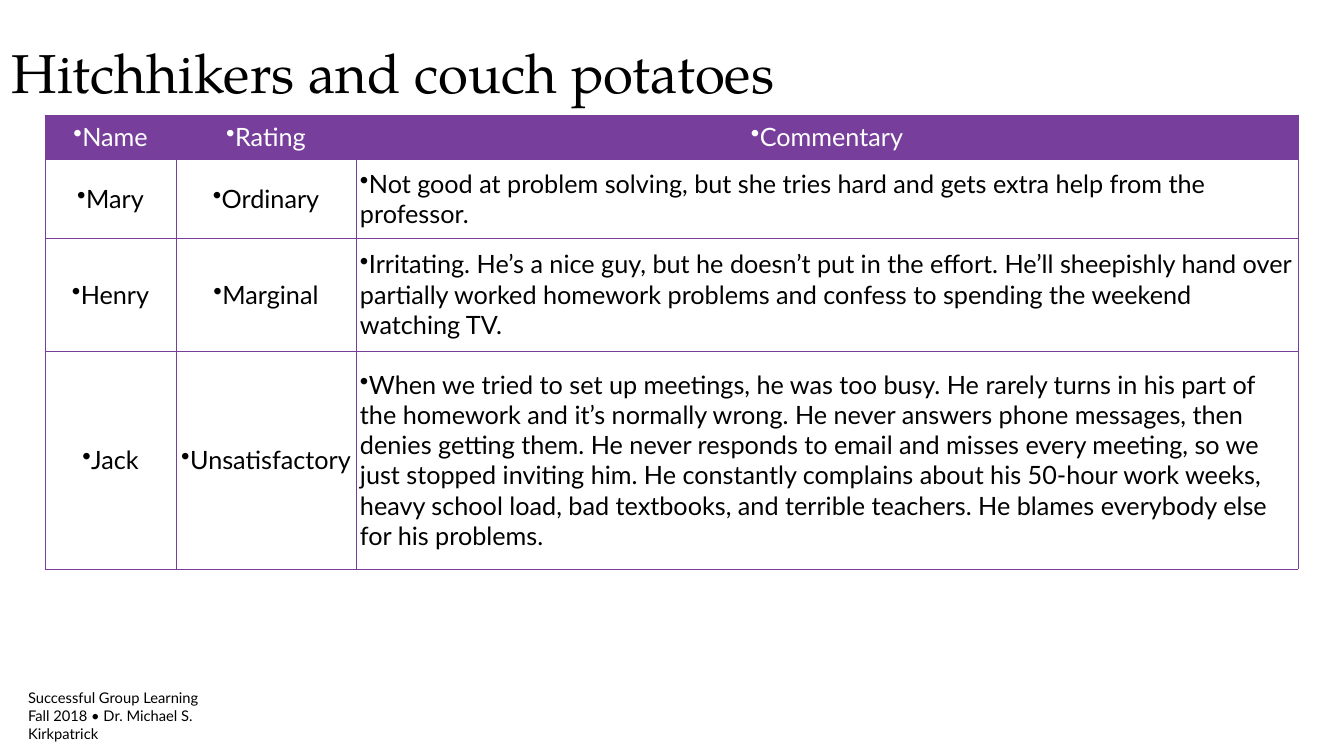
from lxml.etree import SubElement
from pptx import Presentation
from pptx.dml.color import RGBColor
from pptx.enum.text import MSO_ANCHOR as Anchor, PP_ALIGN as Align
from pptx.oxml.ns import qn
from pptx.util import Pt

EMU_PER_PX = 12095
COLORS = {"purple": "773F9B", "white": "FFFFFF", "black": "000000"}
BODY_FONT = "Lato"
TITLE_FONT = "TeX Gyre Pagella"

COLUMN_WIDTHS = [131, 180, 942]
ROW_HEIGHTS = [44, 79, 113, 218]
RATINGS = [
    ("Name", "Rating", "Commentary"),
    ("Mary", "Ordinary",
     "Not good at problem solving, but she tries hard and gets extra help "
     "from the professor."),
    ("Henry", "Marginal",
     "Irritating. He’s a nice guy, but he doesn’t put in the effort. He’ll "
     "sheepishly hand over partially worked homework problems and confess to "
     "spending the weekend watching TV."),
    ("Jack", "Unsatisfactory",
     "When we tried to set up meetings, he was too busy. He rarely turns in "
     "his part of the homework and it’s normally wrong. He never answers phone "
     "messages, then denies getting them. He never responds to email and "
     "misses every meeting, so we just stopped inviting him. He constantly "
     "complains about his 50-hour work weeks, heavy school load, bad "
     "textbooks, and terrible teachers. He blames everybody else for his "
     "problems."),
]


def px(length):
    return length * EMU_PER_PX


def add_run(paragraph, text, size, font, color):
    run = paragraph.add_run()
    run.text = text
    run.font.size = Pt(size)
    run.font.name = font
    run.font.bold = False
    run.font.color.rgb = RGBColor.from_string(COLORS[color])


def set_margins(holder, margin):
    holder.margin_left = holder.margin_right = px(margin)
    holder.margin_top = holder.margin_bottom = px(margin)


def add_lines(slide, box, lines, size, font, wrap):
    frame = slide.shapes.add_textbox(*map(px, box)).text_frame
    frame.word_wrap = wrap
    frame.vertical_anchor = Anchor.MIDDLE
    set_margins(frame, 3)
    for index, line in enumerate(lines):
        paragraph = frame.add_paragraph() if index else frame.paragraphs[0]
        paragraph.alignment = Align.LEFT
        add_run(paragraph, line, size, font, "black")


def add_borders(cell, color):
    properties = cell._tc.get_or_add_tcPr()
    for side in ("lnL", "lnR", "lnT", "lnB"):
        border = SubElement(properties, qn(f"a:{side}"), w=str(Pt(1)))
        fill = SubElement(border, qn("a:solidFill"))
        SubElement(fill, qn("a:srgbClr"), val=COLORS[color])


def add_bullet(paragraph):
    properties = paragraph._p.get_or_add_pPr()
    properties.set("marL", "0")
    properties.set("indent", "0")
    SubElement(properties, qn("a:buChar"), char="•")


def fill_cell(cell, text, is_header, centered):
    set_margins(cell, 4)
    cell.vertical_anchor = Anchor.MIDDLE
    add_borders(cell, "purple")
    cell.fill.solid()
    cell.fill.fore_color.rgb = RGBColor.from_string(
        COLORS["purple" if is_header else "white"])
    paragraph = cell.text_frame.paragraphs[0]
    paragraph.alignment = Align.CENTER if centered else Align.LEFT
    add_bullet(paragraph)
    add_run(paragraph, text, 24, BODY_FONT, "white" if is_header else "black")


def add_ratings(slide, left, top):
    box = (left, top, sum(COLUMN_WIDTHS), sum(ROW_HEIGHTS))
    ratings = slide.shapes.add_table(
        len(ROW_HEIGHTS), len(COLUMN_WIDTHS), *map(px, box)).table
    ratings.horz_banding = False
    for column, width in zip(ratings.columns, COLUMN_WIDTHS):
        column.width = px(width)
    for row, height in zip(ratings.rows, ROW_HEIGHTS):
        row.height = px(height)
    for r, entry in enumerate(RATINGS):
        for c, text in enumerate(entry):
            is_header = r == 0
            fill_cell(ratings.cell(r, c), text, is_header, is_header or c < 2)


def main():
    deck = Presentation()
    deck.slide_width, deck.slide_height = px(1344), px(756)
    slide = deck.slides.add_slide(deck.slide_layouts[6])
    add_lines(slide, (25, 693, 245, 45),
              ["Successful Group Learning",
               "Fall 2018 • Dr. Michael S. Kirkpatrick"],
              14, BODY_FONT, False)
    add_lines(slide, (9, 30, 855, 83), ["Hitchhikers and couch potatoes"],
              52, TITLE_FONT, True)
    add_ratings(slide, 45, 115)
    deck.save("out.pptx")


if __name__ == "__main__":
    main()
